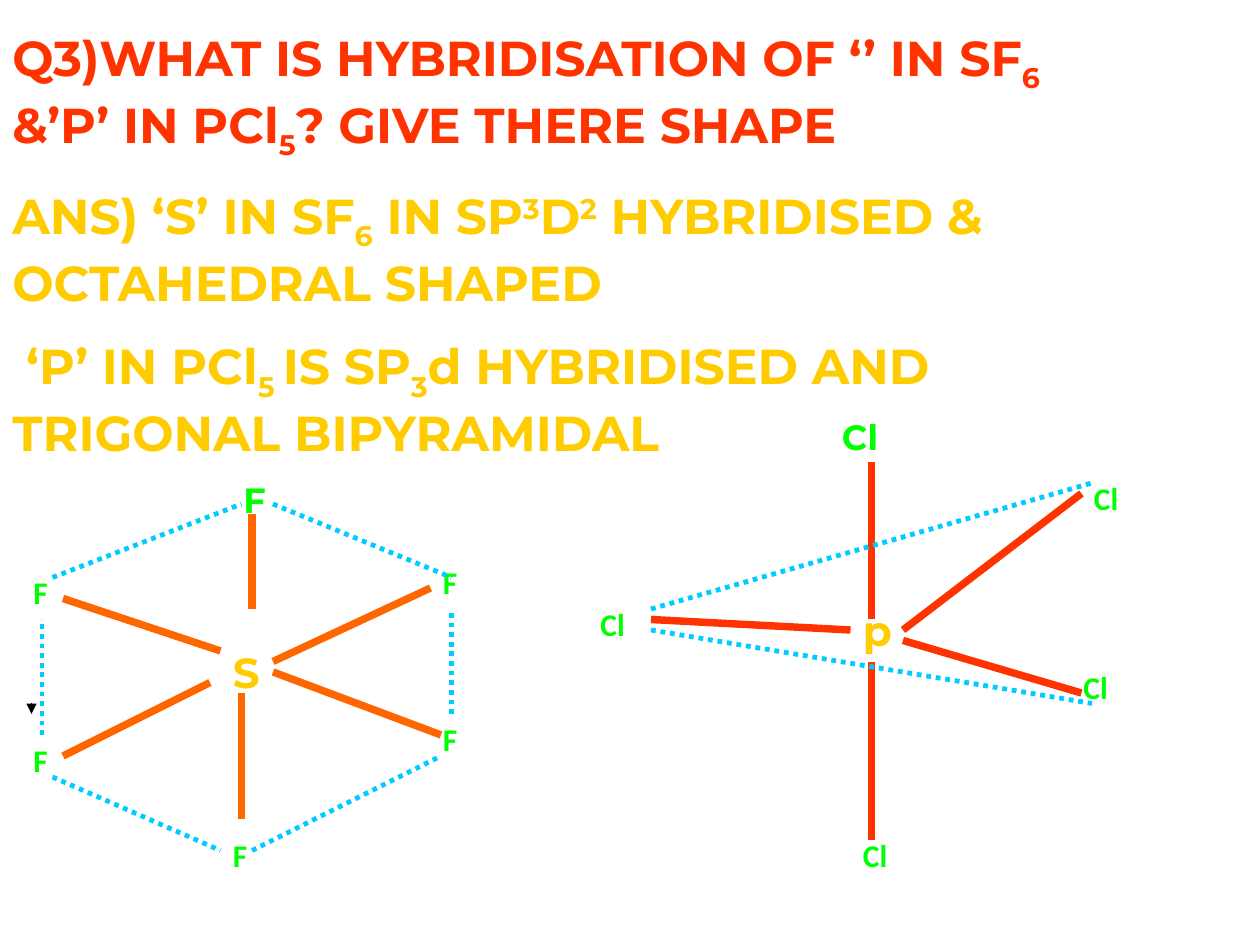
import dataclasses
from typing import NamedTuple, Optional

import lxml.etree
import pptx
import pptx.dml.color
import pptx.enum.dml
import pptx.enum.shapes
import pptx.enum.text
import pptx.oxml.ns
import pptx.util


@dataclasses.dataclass(frozen=True)
class Theme:
    question: str = "FF3300"
    answer: str = "FFCC00"
    ligand: str = "00FF00"
    fluoride_bond: str = "FF6600"
    chloride_bond: str = "FF3300"
    outline: str = "00CCFF"
    marker: str = "000000"
    display_font: str = "Montserrat"
    label_font: str = "Calibri"
    body_size: float = 28
    center_size: float = 24
    apex_size: float = 20
    label_size: float = 18
    bond_width: float = 4.25
    outline_width: float = 2.75
    marker_width: float = 0.75


class Span(NamedTuple):
    text: str
    baseline: int = 0


class Atom(NamedTuple):
    symbol: str
    left: float
    top: float
    width: float
    height: float


class Segment(NamedTuple):
    start_x: float
    start_y: float
    end_x: float
    end_y: float


THEME = Theme()
GRID_CM = 2.54 / 12
SUBSCRIPT = -25
SUPERSCRIPT = 30

STATEMENTS = [
    (THEME.question, [
        Span("Q3)WHAT IS HYBRIDISATION OF ‘’ IN SF"), Span("6", SUBSCRIPT),
        Span(" &’P’ IN PCl"), Span("5", SUBSCRIPT), Span("? GIVE THERE SHAPE"),
    ]),
    (THEME.answer, [
        Span("ANS) ‘S’ IN SF"), Span("6", SUBSCRIPT), Span(" IN SP"),
        Span("3", SUPERSCRIPT), Span("D"), Span("2", SUPERSCRIPT),
        Span(" HYBRIDISED & OCTAHEDRAL SHAPED"),
    ]),
    (THEME.answer, [
        Span(" ‘P’ IN PCl"), Span("5 ", SUBSCRIPT), Span("IS SP"),
        Span("3", SUBSCRIPT), Span("d HYBRIDISED AND TRIGONAL BIPYRAMIDAL"),
    ]),
]

CENTERS = [Atom("S", 21, 61, 5, 6), Atom("p", 81, 57, 5, 6)]
APEXES = [Atom("F", 22, 45, 4, 5.2), Atom("Cl", 79, 39, 8, 5.2)]
FLUORINES = [(41, 53), (21, 79), (2, 70), (2, 54), (41, 68)]
CHLORINES = [(102, 63), (103, 45), (81, 79), (56, 57)]
LIGANDS = [Atom("F", left, top, 4.2, 4.8) for left, top in FLUORINES]
LIGANDS += [Atom("Cl", left, top, 5.4, 4.8) for left, top in CHLORINES]

FLUORIDE_BONDS = [
    Segment(24, 49, 24, 58), Segment(26, 64, 42, 70), Segment(41, 56, 26, 63),
    Segment(6, 72, 20, 65), Segment(6, 57, 21, 62), Segment(23, 66, 23, 78),
]
CHLORIDE_BONDS = [
    Segment(83, 44, 83, 59), Segment(103, 47, 86, 60), Segment(103, 66, 86, 61),
    Segment(81, 60, 62, 59), Segment(83, 63, 83, 80),
]
OUTLINES = [
    Segment(62, 58, 104, 46), Segment(62, 60, 104, 67), Segment(5, 74, 21, 81),
    Segment(43, 68, 43, 58), Segment(24, 81, 42, 72), Segment(26, 48, 43, 55),
    Segment(4, 70, 4, 59), Segment(5, 55, 23, 48),
]
MARKER = Segment(3, 67, 3, 68)


def grid(steps: float) -> pptx.util.Length:
    return pptx.util.Cm(steps * GRID_CM)


def color(value: str) -> pptx.dml.color.RGBColor:
    return pptx.dml.color.RGBColor.from_string(value)


def add_child(parent, tag: str, **attributes: str):
    return lxml.etree.SubElement(parent, pptx.oxml.ns.qn(tag), attributes)


def add_text_frame(slide, left: float, top: float, width: float, height: float, wrap: bool = True):
    shape = slide.shapes.add_textbox(*map(grid, (left, top, width, height)))
    frame = shape.text_frame
    frame.word_wrap = wrap
    frame.auto_size = pptx.enum.text.MSO_AUTO_SIZE.SHAPE_TO_FIT_TEXT
    return frame


def write_spans(paragraph, spans: list[Span], *, font: str, size: float, fill: str, spaced: bool = True) -> None:
    if spaced:
        space_before = add_child(paragraph._p.get_or_add_pPr(), "a:spcBef")
        add_child(space_before, "a:spcPct", val="50000")
    for span in spans:
        run = paragraph.add_run()
        run.text = span.text
        run.font.name = font
        run.font.size = pptx.util.Pt(size)
        run.font.bold = True
        run.font.color.rgb = color(fill)
        if span.baseline:
            run._r.get_or_add_rPr().set("baseline", str(span.baseline * 1000))


def draw_statements(slide) -> None:
    frame = add_text_frame(slide, 0, 2, 105, 40.4)
    for index, (fill, spans) in enumerate(STATEMENTS):
        paragraph = frame.add_paragraph() if index else frame.paragraphs[0]
        write_spans(paragraph, spans, font=THEME.display_font, size=THEME.body_size, fill=fill)


def draw_atoms(slide, atoms: list[Atom], *, font: str, size: float, fill: str, wrap: bool = True) -> None:
    for atom in atoms:
        frame = add_text_frame(slide, atom.left, atom.top, atom.width, atom.height, wrap)
        write_spans(frame.paragraphs[0], [Span(atom.symbol)], font=font, size=size, fill=fill, spaced=wrap)


def draw_segments(
    slide,
    segments: list[Segment],
    *,
    stroke: str,
    width: float,
    dash: Optional[pptx.enum.dml.MSO_LINE] = None,
    arrow: bool = False,
) -> None:
    for segment in segments:
        connector = slide.shapes.add_connector(
            pptx.enum.shapes.MSO_CONNECTOR.STRAIGHT, *map(grid, segment)
        )
        connector.line.color.rgb = color(stroke)
        connector.line.width = pptx.util.Pt(width)
        if dash is not None:
            connector.line.dash_style = dash
        if arrow:
            add_child(connector.line._get_or_add_ln(), "a:tailEnd", type="triangle")
        add_child(connector._element.spPr, "a:effectLst")


def main() -> None:
    presentation = pptx.Presentation()
    presentation.slide_width = pptx.util.Cm(25.4)
    presentation.slide_height = pptx.util.Cm(19.05)
    slide = presentation.slides.add_slide(presentation.slide_layouts[6])

    draw_statements(slide)
    draw_segments(slide, [MARKER], stroke=THEME.marker, width=THEME.marker_width, arrow=True)
    draw_atoms(slide, CENTERS, font=THEME.display_font, size=THEME.center_size, fill=THEME.answer)
    draw_atoms(slide, APEXES, font=THEME.display_font, size=THEME.apex_size, fill=THEME.ligand)
    draw_atoms(slide, LIGANDS, font=THEME.label_font, size=THEME.label_size, fill=THEME.ligand, wrap=False)
    draw_segments(slide, FLUORIDE_BONDS, stroke=THEME.fluoride_bond, width=THEME.bond_width)
    draw_segments(slide, CHLORIDE_BONDS, stroke=THEME.chloride_bond, width=THEME.bond_width)
    draw_segments(
        slide, OUTLINES, stroke=THEME.outline, width=THEME.outline_width,
        dash=pptx.enum.dml.MSO_LINE.ROUND_DOT,
    )
    presentation.save("out.pptx")


if __name__ == "__main__":
    main()
